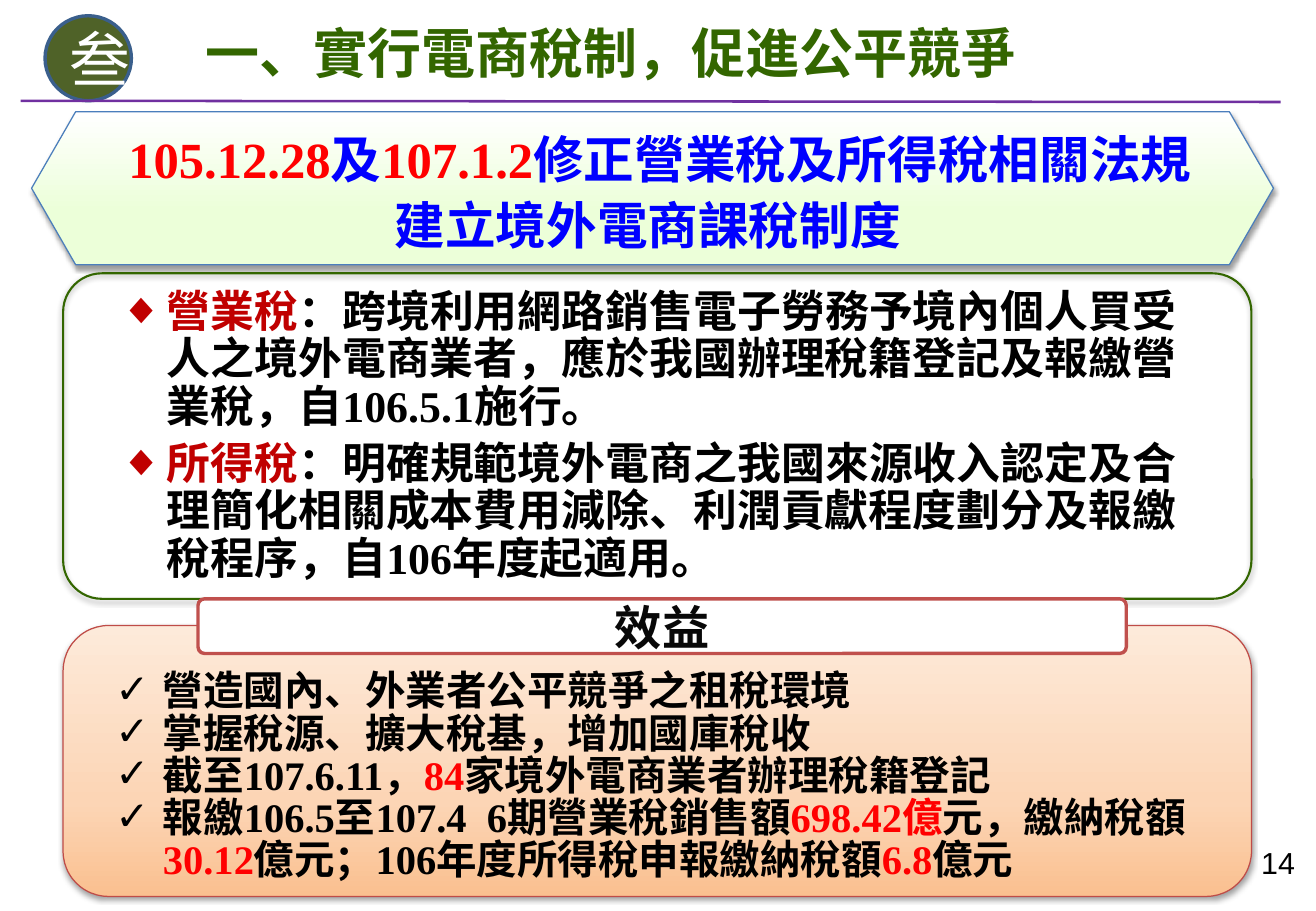
"""Build the slide on the e-commerce tax rules and their benefits."""
from lxml.etree import SubElement
from pptx import Presentation
from pptx.dml.color import RGBColor
from pptx.enum.shapes import MSO_CONNECTOR, MSO_SHAPE as SHAPE
from pptx.enum.text import MSO_ANCHOR as ANCHOR, MSO_AUTO_SIZE, PP_ALIGN as ALIGN
from pptx.oxml.ns import qn
from pptx.util import Inches, Pt

WIDTH, HEIGHT = Inches(10.83), Inches(7.5)
SERIF, SANS = "Times New Roman", "Noto Sans CJK SC"
BLACK, WHITE, RED, BLUE = "000000", "FFFFFF", "FF0000", "0000FF"
GREEN, CRIMSON = "336600", "C00000"

BADGE = [[("叁", WHITE)]]
TITLE = [[("一、實行電商稅制，促進公平競爭", GREEN)]]
BANNER = [
    [("105.12.28", RED), ("及", BLUE), ("107.1.2", RED),
     ("修正營業稅及所得稅相關法規", BLUE)],
    [("建立境外電商課稅制度", BLUE)],
]
RULES = [
    [("營業稅", CRIMSON),
     ("：跨境利用網路銷售電子勞務予境內個人買受人之境外電商業者，"
      "應於我國辦理稅籍登記及報繳營業稅，自106.5.1施行。", BLACK)],
    [("所得稅", CRIMSON),
     ("：明確規範境外電商之我國來源收入認定及合理簡化相關成本費用減除、"
      "利潤貢獻程度劃分及報繳稅程序，自106年度起適用。", BLACK)],
]
BENEFITS_LABEL = [[("效益", "080808")]]
BENEFITS = [
    [("營造國內、外業者公平競爭之租稅環境", BLACK)],
    [("掌握稅源、擴大稅基，增加國庫稅收", BLACK)],
    [("截至107.6.11，", BLACK), ("84", RED), ("家境外電商業者辦理稅籍登記", BLACK)],
    [("報繳106.5至107.4  6期營業稅銷售額", BLACK), ("698.42億", RED),
     ("元，繳納稅額", BLACK), ("30.12", RED),
     ("億元；106年度所得稅申報繳納稅額", BLACK), ("6.8", RED), ("億元", BLACK)],
]
PAGE = [[("14", BLACK)]]

# Shares of the slide in percent: left, top, width, height
AREAS = {
    "badge": (3.42, 1.73, 6.56, 9.33),
    "title": (10.06, 4, 84.49, 6),
    "banner": (2.4, 12.27, 94.37, 16.8),
    "banner text": (3.42, 14, 91.6, 22.13),
    "rules": (4.8, 30, 90.3, 35.73),
    "rules text": (8.13, 31.07, 84.76, 39.07),
    "benefits": (4.8, 68.67, 90.3, 29.73),
    "benefits text": (7.85, 73.07, 87.07, 25),
    "benefits label": (15.05, 65.73, 70.54, 6),
    "page": (94.92, 92, 4.43, 5.33),
    "divider": (1.57, 11.07, 95.75, 0.13),
}


def rgb(value):
    """Turn a hex string into a colour."""
    return RGBColor.from_string(value)


def area(name):
    """Give the left, top, width and height of a named area."""
    return [round(share * side / 100)
            for share, side in zip(AREAS[name], (WIDTH, HEIGHT) * 2)]


def add_panel(slide, name, kind, line, weight, fill=None, adjust=None):
    """Add an outlined shape with a plain, graded or empty fill."""
    panel = slide.shapes.add_shape(kind, *area(name))
    panel.shadow.inherit = False
    panel.line.color.rgb = rgb(line)
    panel.line.width = Pt(weight)
    if adjust:
        panel.adjustments[0] = adjust
    if fill is None:
        panel.fill.background()
    elif isinstance(fill, str):
        panel.fill.solid()
        panel.fill.fore_color.rgb = rgb(fill)
    else:
        panel.fill.gradient()
        panel.fill.gradient_angle = 90
        stops = next(panel._element.spPr.iter(qn("a:gsLst")))
        stops.clear()
        for share, colour in zip((0, 35, 100), fill):
            stop = SubElement(stops, qn("a:gs"), pos=str(share * 1000))
            SubElement(stop, qn("a:srgbClr"), val=colour)
    return panel


def add_shadow(panel):
    """Give a panel a soft shadow below it."""
    effects = panel._element.spPr.find(qn("a:effectLst"))
    shadow = SubElement(effects, qn("a:outerShdw"), blurRad=str(Pt(3.1)),
                        dist=str(Pt(1.6)), dir="5400000", rotWithShape="0")
    colour = SubElement(shadow, qn("a:srgbClr"), val=BLACK)
    SubElement(colour, qn("a:alpha"), val="38000")


def write(holder, content, size, font=SERIF, bold=True, align=ALIGN.LEFT,
          spacing=None, before=0, bullet=None, indent=0, anchor=ANCHOR.TOP, wrap=True):
    """Fill a shape with paragraphs of coloured runs."""
    frame = holder.text_frame
    frame.auto_size = MSO_AUTO_SIZE.NONE
    frame.word_wrap = wrap
    frame.vertical_anchor = anchor
    for index, runs in enumerate(content):
        paragraph = frame.add_paragraph() if index else frame.paragraphs[0]
        paragraph.alignment = align
        paragraph.space_before = Pt(before)
        if spacing:
            paragraph.line_spacing = Pt(spacing)
        properties = paragraph._p.get_or_add_pPr()
        properties.set("marL", str(0 if index and not bullet else Inches(indent)))
        properties.set("indent", str(-Inches(indent) if bullet else 0))
        if bullet:
            SubElement(properties, qn("a:buChar"), char=bullet)
        paragraph.font.size = Pt(size)
        paragraph.font.bold = bold
        paragraph.font.name = font
        SubElement(properties.find(qn("a:defRPr")), qn("a:ea"), typeface=SANS)
        for text, colour in runs:
            run = paragraph.add_run()
            run.text = text
            run.font.color.rgb = rgb(colour)


def raise_to(placeholder, name):
    """Move a placeholder to its area, in front of the shapes so far."""
    placeholder.left, placeholder.top, placeholder.width, placeholder.height = area(name)
    tree = placeholder._element.getparent()
    tree.append(placeholder._element)
    return placeholder


def main():
    """Build and save the slide."""
    deck = Presentation()
    deck.slide_width, deck.slide_height = WIDTH, HEIGHT
    slide = deck.slides.add_slide(deck.slide_layouts[3])
    title, rules, benefits = slide.placeholders

    badge = add_panel(slide, "badge", SHAPE.OVAL, "3A5F8C", 2, "4F6228")
    write(badge, BADGE, 36, SANS, bold=False, align=ALIGN.CENTER, anchor=ANCHOR.MIDDLE)

    for panel in (
        ("benefits", SHAPE.ROUNDED_RECTANGLE, "BF4C48", 0.75,
         ("FAC090", "FCD5B5", "FDEADA"), 0.167),
        ("banner", SHAPE.HEXAGON, "4B7EBC", 0.75, ("ECFFD9", "ECFFD9", WHITE), 0.288),
        ("rules", SHAPE.ROUNDED_RECTANGLE, GREEN, 1.25, None, 0.119),
    ):
        add_shadow(add_panel(slide, *panel))

    left, top, width, height = area("divider")
    divider = slide.shapes.add_connector(
        MSO_CONNECTOR.STRAIGHT, left, top, left + width, top + height)
    divider.line.color.rgb = rgb("7030A0")
    divider.line.width = Pt(1.5)
    SubElement(divider._element.spPr, qn("a:effectLst"))

    banner = slide.shapes.add_textbox(*area("banner text"))
    write(banner, BANNER, 30, align=ALIGN.CENTER, spacing=33, before=6, indent=0.2)
    write(raise_to(rules, "rules text"), RULES, 26,
          spacing=28, before=6, bullet="◆", indent=0.39)
    write(raise_to(benefits, "benefits text"), BENEFITS, 24,
          spacing=25, bullet="✓", indent=0.39)
    write(raise_to(title, "title"), TITLE, 32, spacing=25, indent=0.5)

    label = add_panel(slide, "benefits label", SHAPE.ROUNDED_RECTANGLE,
                      "C0504D", 2, WHITE, 0.119)
    write(label, BENEFITS_LABEL, 28, SANS, align=ALIGN.CENTER,
          anchor=ANCHOR.MIDDLE, wrap=False)
    page = slide.shapes.add_textbox(*area("page"))
    write(page, PAGE, 18, "Arial", bold=False, wrap=False)

    deck.save("out.pptx")


if __name__ == "__main__":
    main()
